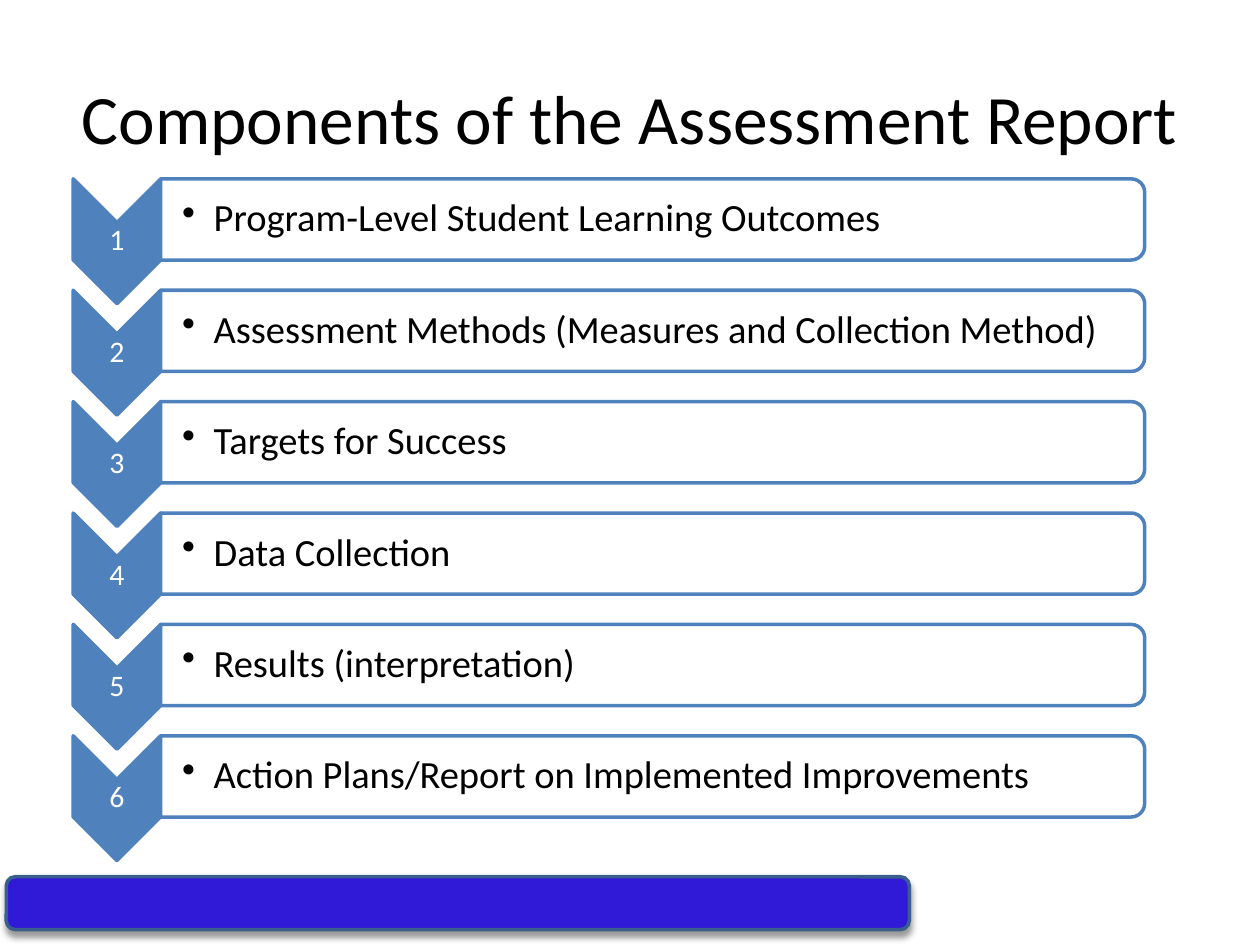
from lxml import etree
from pptx import Presentation
from pptx.dml.color import RGBColor
from pptx.enum.shapes import MSO_SHAPE
from pptx.enum.text import MSO_ANCHOR, PP_ALIGN
from pptx.oxml.ns import qn
from pptx.util import Pt

CHEVRON = MSO_SHAPE.CHEVRON
PANEL = MSO_SHAPE.ROUND_2_SAME_RECTANGLE
ROUNDED = MSO_SHAPE.ROUNDED_RECTANGLE
MIDDLE = MSO_ANCHOR.MIDDLE
LEFT, CENTER = PP_ALIGN.LEFT, PP_ALIGN.CENTER

BLUE, WHITE, BLACK = "4F81BD", "FFFFFF", "000000"
COMPONENTS = [
    "Program-Level Student Learning Outcomes",
    "Assessment Methods (Measures and Collection Method)",
    "Targets for Success",
    "Data Collection",
    "Results (interpretation)",
    "Action Plans/Report on Implemented Improvements",
]


def color(value):
    """Return the colour of a hex string."""
    return RGBColor.from_string(value)


def add_text(slide, text, left, top, width, height, size=22, fill=BLACK,
             align=LEFT, inset=0, margin=0, bullet=False, spacing=0.9):
    """Add a middle-anchored text box with one paragraph."""
    frame = slide.shapes.add_textbox(Pt(left), Pt(top), Pt(width), Pt(height)).text_frame
    frame.word_wrap = True
    frame.vertical_anchor = MIDDLE
    frame.margin_left = Pt(inset)
    frame.margin_right = frame.margin_top = frame.margin_bottom = Pt(margin)
    paragraph = frame.paragraphs[0]
    paragraph.text = text
    paragraph.alignment = align
    paragraph.line_spacing = spacing
    if bullet:
        properties = paragraph._p.get_or_add_pPr()
        properties.set("marL", str(Pt(18)))
        properties.set("indent", str(Pt(-18)))
        etree.SubElement(properties, qn("a:buChar"), char="•")
    font = paragraph.font
    font.name = "Calibri"
    font.size = Pt(size)
    font.color.rgb = color(fill)


def add_block(slide, kind, left, top, width, height, fill, line, turned=False):
    """Add a filled shape covering a box, optionally turned a quarter clockwise."""
    if turned:
        left, top = left + (width - height) / 2, top + (height - width) / 2
        width, height = height, width
    shape = slide.shapes.add_shape(kind, Pt(left), Pt(top), Pt(width), Pt(height))
    shape.rotation = 90 if turned else 0
    shape.shadow.inherit = False
    shape.fill.solid()
    shape.fill.fore_color.rgb = color(fill)
    shape.line.color.rgb = color(line)
    shape.line.width = Pt(2)
    return shape


def add_footer_bar(slide, left, top, width, height):
    """Add the footer bar with its soft shadow below."""
    bar = add_block(slide, ROUNDED, left, top, width, height, "3019D7", "3A5F8C")
    effects = bar._element.spPr.find(qn("a:effectLst"))
    shadow = etree.SubElement(effects, qn("a:outerShdw"), blurRad=str(Pt(4)),
                              dist=str(Pt(3)), dir="5400000", rotWithShape="0")
    tint = etree.SubElement(shadow, qn("a:srgbClr"), val=BLACK)
    etree.SubElement(tint, qn("a:alpha"), val="40000")


def add_component(slide, number, text, left, top, width, height):
    """Add one numbered chevron and its bulleted panel."""
    chevron_width, panel_height = 50, 46.4
    panel_left, panel_width = left + chevron_width, width - chevron_width
    add_block(slide, CHEVRON, left, top, chevron_width, height, BLUE, BLUE, turned=True)
    add_text(slide, str(number), left, top + chevron_width / 2, chevron_width,
             height - chevron_width, size=17, fill=WHITE, align=CENTER,
             inset=0.7, margin=0.7)
    add_block(slide, PANEL, panel_left, top, panel_width, panel_height,
              WHITE, BLUE, turned=True)
    add_text(slide, text, panel_left, top, panel_width, panel_height,
             inset=12.3, margin=1.4, bullet=True)


def add_component_list(slide, left, top, width, pitch):
    """Stack the components at an even pitch."""
    for index, text in enumerate(COMPONENTS):
        add_component(slide, index + 1, text, left, top + index * pitch, width, 71.3)


def main():
    """Build and save the slide."""
    presentation = Presentation()
    presentation.slide_width, presentation.slide_height = Pt(720), Pt(540)
    slide = presentation.slides.add_slide(presentation.slide_layouts[6])
    add_footer_bar(slide, 3.6, 501, 516, 30.2)
    add_text(slide, "Components of the Assessment Report", 36, 21.6, 648, 90,
             size=39.6, align=CENTER, spacing=1.0)
    add_component_list(slide, 41.8, 102.2, 612.3, 63.65)
    presentation.save("out.pptx")


if __name__ == "__main__":
    main()
